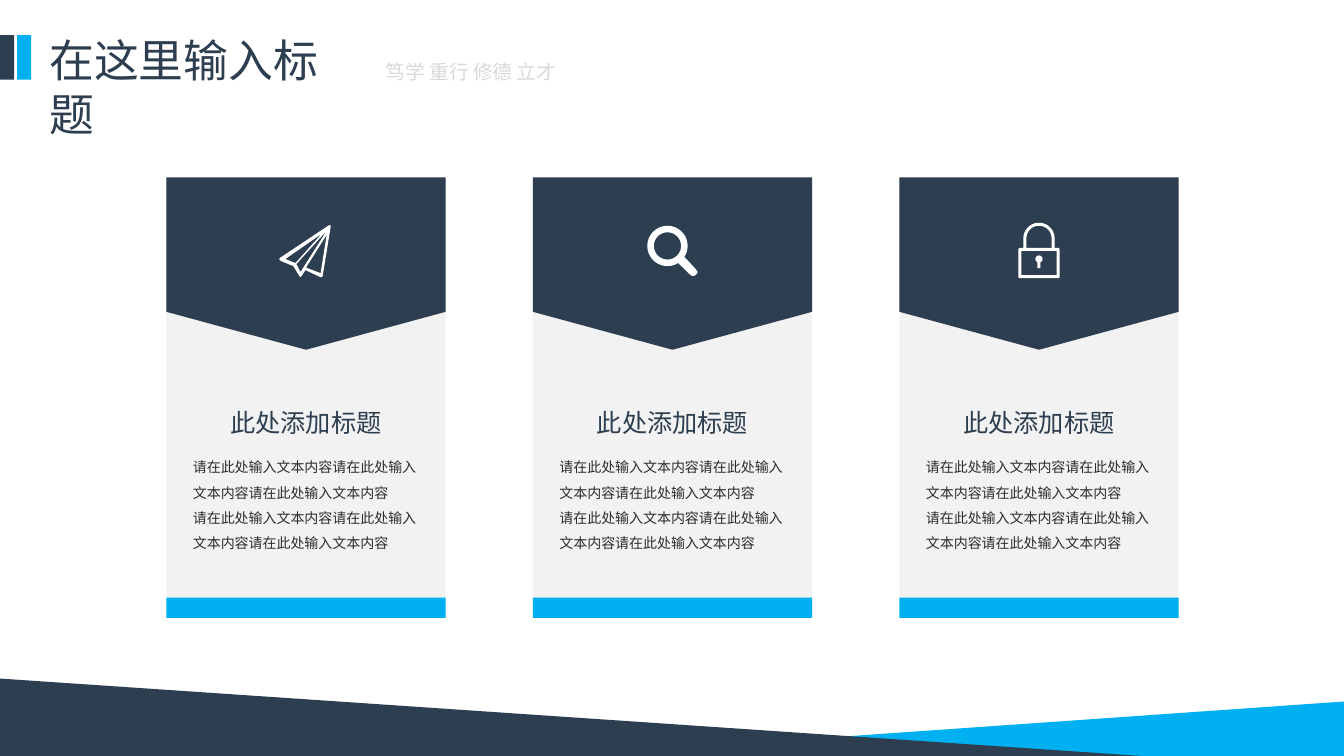
from math import cos, radians, sin

from lxml.etree import SubElement
from pptx import Presentation
from pptx.dml.color import RGBColor
from pptx.enum.shapes import MSO_SHAPE
from pptx.enum.text import MSO_AUTO_SIZE, PP_ALIGN
from pptx.oxml.ns import qn
from pptx.util import Inches, Pt

TITLE = "在这里输入标题"
MOTTO = "笃学 重行 修德 立才"
BODY = "请在此处输入文本内容请在此处输入文本内容请在此处输入文本内容"
CARDS = [
    ("plane", "此处添加标题", [BODY, BODY]),
    ("magnifier", "此处添加标题", [BODY, BODY]),
    ("lock", "此处添加标题", [BODY, BODY]),
]
COLORS = {
    "navy": "2D3E50",
    "blue": "00B0F0",
    "panel": "F2F2F2",
    "body": "2D2D2D",
    "motto": "D9D9D9",
    "white": "FFFFFF",
}
CJK_FONT = "Noto Sans CJK SC"

SLIDE_WIDTH, SLIDE_HEIGHT = 13.33, 7.5
CARD_WIDTH, CARD_HEIGHT, CARD_TOP = 2.77, 4.37, 1.76
CARD_PITCH = 3.635
FIRST_CENTER = SLIDE_WIDTH / 2 - CARD_PITCH + 0.005
FLAP_HEIGHT, STRIP_HEIGHT = 1.71, 0.2
MARK_WIDTH, MARK_HEIGHT, MARK_TOP = 0.14, 0.44, 0.35
HEADING_WIDTH, BODY_WIDTH = 1.7, 2.44


def arc(center_x, center_y, radius, start, end, steps=40):
    angles = [radians(start + (end - start) * step / steps) for step in range(steps + 1)]
    return [(center_x + radius * cos(a), center_y + radius * sin(a)) for a in angles]


ICONS = {
    "plane": [[
        [(0.24, 2.23), (0.22, 2.24), (-0.26, 2.56), (-0.265, 2.575), (-0.25, 2.59),
         (-0.125, 2.64), (-0.065, 2.74), (-0.055, 2.75), (-0.045, 2.74), (-0.005, 2.68),
         (0.145, 2.75), (0.155, 2.75), (0.165, 2.74), (0.245, 2.25)],
        [(-0.205, 2.57), (0.155, 2.32), (-0.105, 2.61)],
        [(-0.095, 2.62), (0.205, 2.29), (-0.055, 2.7)],
        [(0.145, 2.71), (0, 2.655), (0.205, 2.33)],
    ]],
    "magnifier": [[
        arc(-0.05, 2.44, 0.2, 58, 393)
        + [(0.23, 2.67), (0.25, 2.7), (0.23, 2.73), (0.2, 2.74), (0.18, 2.73)],
        arc(-0.05, 2.44, 0.135, 0, 360),
    ]],
    "lock": [
        [
            [(-0.155, 2.46)] + arc(0, 2.365, 0.155, 180, 360)
            + [(0.155, 2.46), (0.195, 2.46), (0.205, 2.47), (0.205, 2.75), (0.195, 2.76),
               (-0.195, 2.76), (-0.205, 2.75), (-0.205, 2.47), (-0.195, 2.46)],
            [(-0.125, 2.46)] + arc(0, 2.365, 0.125, 180, 360) + [(0.125, 2.46)],
            [(-0.175, 2.49), (0.175, 2.49), (0.175, 2.73), (-0.175, 2.73)],
        ],
        [arc(0, 2.57, 0.035, 115, 425) + [(0.015, 2.66), (-0.015, 2.66)]],
    ],
}

deck = Presentation()
deck.slide_width, deck.slide_height = Inches(SLIDE_WIDTH), Inches(SLIDE_HEIGHT)
page = deck.slides.add_slide(deck.slide_layouts[6])


def paint(shape, color):
    shape.shadow.inherit = False
    shape.fill.solid()
    shape.fill.fore_color.rgb = RGBColor.from_string(COLORS[color])
    shape.line.fill.background()


def add_block(left, top, width, height, color, kind=MSO_SHAPE.RECTANGLE):
    block = page.shapes.add_shape(kind, Inches(left), Inches(top), Inches(width), Inches(height))
    paint(block, color)
    return block


def add_outline(contours, color, shift=0):
    contours = [[(Inches(x + shift), Inches(y)) for x, y in points] for points in contours]
    builder = page.shapes.build_freeform(*contours[0][0], scale=1.0)
    builder.add_line_segments(contours[0][1:], close=True)
    for points in contours[1:]:
        builder.move_to(*points[0])
        builder.add_line_segments(points[1:], close=True)
    paint(builder.convert_to_shape(), color)


def add_text(lines, left, top, width, height, *, size, color, font=CJK_FONT,
             align=PP_ALIGN.LEFT, spacing=1.0, wrap=True):
    box = page.shapes.add_textbox(Inches(left), Inches(top), Inches(width), Inches(height))
    frame = box.text_frame
    frame.word_wrap = wrap
    frame.auto_size = MSO_AUTO_SIZE.SHAPE_TO_FIT_TEXT
    for index, line in enumerate(lines):
        para = frame.add_paragraph() if index else frame.paragraphs[0]
        para.alignment = align
        para.line_spacing = spacing
        span = para.add_run()
        span.text = line
        span.font.size = Pt(size)
        span.font.color.rgb = RGBColor.from_string(COLORS[color])
        span.font.name = font
        SubElement(span.font._element, qn("a:ea"), typeface=CJK_FONT)


def add_card(center, icon, heading, lines):
    left = center - CARD_WIDTH / 2
    add_block(left, CARD_TOP, CARD_WIDTH, CARD_HEIGHT, "panel")
    add_block(left, CARD_TOP + CARD_HEIGHT - STRIP_HEIGHT, CARD_WIDTH, STRIP_HEIGHT, "blue")
    flap = add_block(center - FLAP_HEIGHT / 2, CARD_TOP + (FLAP_HEIGHT - CARD_WIDTH) / 2,
                     FLAP_HEIGHT, CARD_WIDTH, "navy", MSO_SHAPE.PENTAGON)
    flap.adjustments[0] = 0.22
    flap.rotation = 90
    add_text([heading], center - HEADING_WIDTH / 2, 4.03, HEADING_WIDTH, 0.37, size=18,
             color="navy", align=PP_ALIGN.CENTER, spacing=0.9, wrap=False)
    add_text(lines, center - BODY_WIDTH / 2, 4.42, BODY_WIDTH, 1.36, size=10,
             color="body", font="Arial", spacing=1.5)
    for contours in ICONS[icon]:
        add_outline(contours, "white", center)


add_block(0.17, MARK_TOP, MARK_WIDTH, MARK_HEIGHT, "blue")
add_outline([[(5.61, SLIDE_HEIGHT), (SLIDE_WIDTH, 6.96), (SLIDE_WIDTH, SLIDE_HEIGHT)]], "blue")
add_outline([[(-0.03, 6.73), (11.32, SLIDE_HEIGHT), (-0.03, SLIDE_HEIGHT)]], "navy")
add_block(0, MARK_TOP, MARK_WIDTH, MARK_HEIGHT, "navy")
for column, card in enumerate(CARDS):
    add_card(FIRST_CENTER + column * CARD_PITCH, *card)
add_text([TITLE], 0.39, 0.28, 3.3, 0.64, size=32, color="navy")
add_text([MOTTO], 3.73, 0.55, 2.64, 0.34, size=14, color="motto", align=PP_ALIGN.JUSTIFY)

deck.save("out.pptx")
